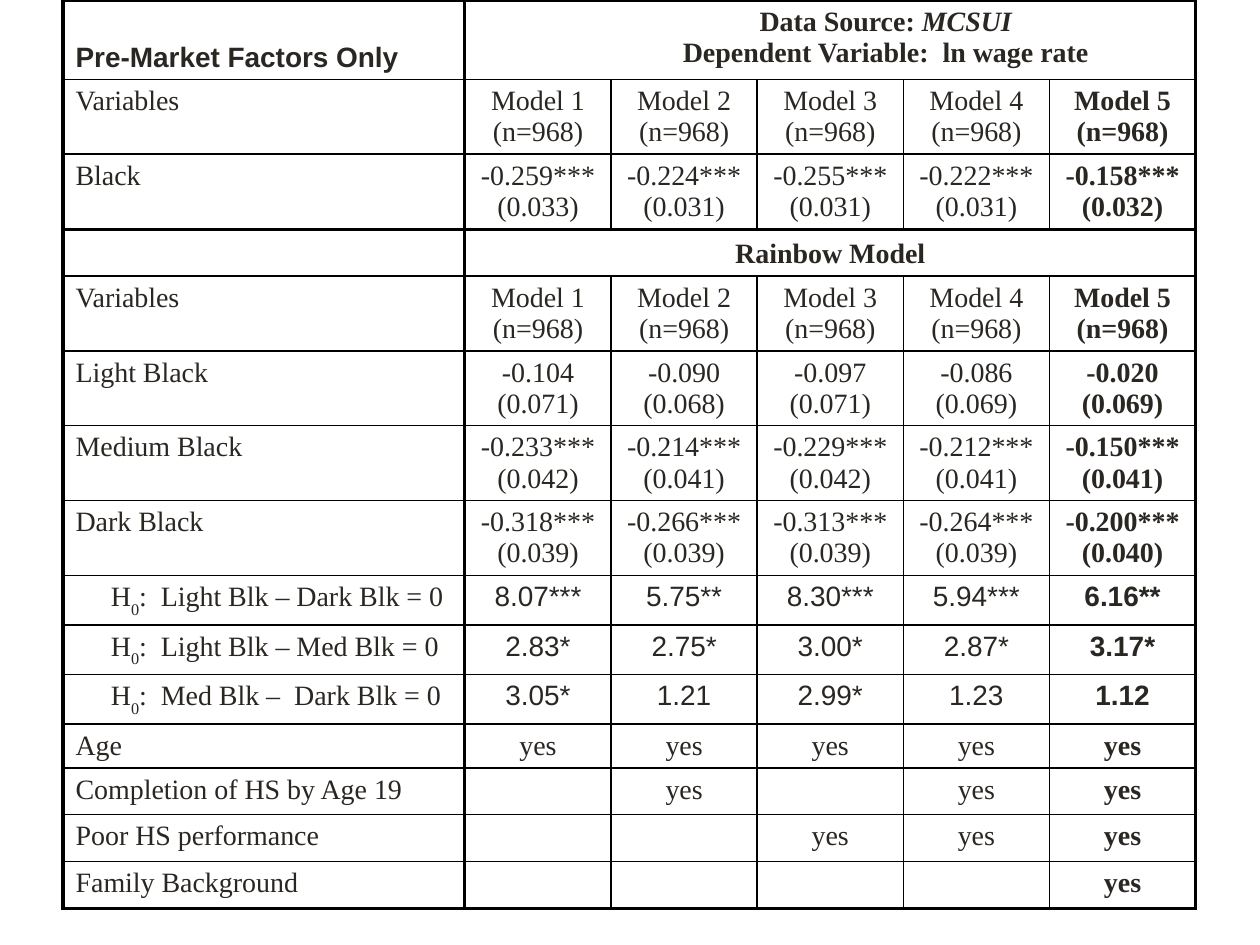
from lxml import etree
from pptx import Presentation
from pptx.dml.color import RGBColor
from pptx.enum.text import MSO_ANCHOR, PP_ALIGN
from pptx.oxml.ns import qn
from pptx.util import Inches, Pt

LEFT, CENTER = PP_ALIGN.LEFT, PP_ALIGN.CENTER
TOP, BOTTOM = MSO_ANCHOR.TOP, MSO_ANCHOR.BOTTOM

SIZES = ["(n=968)"] * 5
MODELS = [f"Model {number}" for number in range(1, 6)]

# Label, estimates and the second line below them
ESTIMATES = {
    1: ("Variables", MODELS, SIZES),
    2: ("Black",
        ["-0.259***", "-0.224***", "-0.255***", "-0.222***", "-0.158***"],
        ["(0.033)", "(0.031)", "(0.031)", "(0.031)", "(0.032)"]),
    4: ("Variables", MODELS, SIZES),
    5: ("Light Black",
        ["-0.104", "-0.090", "-0.097", "-0.086", "-0.020"],
        ["(0.071)", "(0.068)", "(0.071)", "(0.069)", "(0.069)"]),
    6: ("Medium Black",
        ["-0.233***", "-0.214***", "-0.229***", "-0.212***", "-0.150***"],
        ["(0.042)", "(0.041)", "(0.042)", "(0.041)", "(0.041)"]),
    7: ("Dark Black",
        ["-0.318***", "-0.266***", "-0.313***", "-0.264***", "-0.200***"],
        ["(0.039)", "(0.039)", "(0.039)", "(0.039)", "(0.040)"]),
}
HYPOTHESES = {
    8: (":  Light Blk – Dark Blk = 0",
        ["8.07***", "5.75**", "8.30***", "5.94***", "6.16**"]),
    9: (":  Light Blk – Med Blk = 0",
        ["2.83*", "2.75*", "3.00*", "2.87*", "3.17*"]),
    10: (":  Med Blk –  Dark Blk = 0",
         ["3.05*", "1.21", "2.99*", "1.23", "1.12"]),
}
# Control variables and the models that include them
CONTROLS = {
    11: ("Age", [1, 2, 3, 4, 5]),
    12: ("Completion of HS by Age 19", [2, 4, 5]),
    13: ("Poor HS performance", [3, 4, 5]),
    14: ("Family Background", [5]),
}
COLUMN_WIDTHS = [3.19] + [1.16] * 5
ROW_HEIGHTS = [0.63, 0.47, 0.47, 0.2] + [0.47] * 4 + [0.33] * 7


def color(value):
    return RGBColor.from_string(value)


class SlideBuilder:
    serif = "Times New Roman"
    sans = "Arial"
    text_color = "2A2723"
    line_color = "000000"
    size = 16
    thin, thick = 1, 2

    def __init__(self, presentation):
        self.slide = presentation.slides.add_slide(presentation.slide_layouts[6])

    def add_table(self, left, top, widths, heights):
        table = self.slide.shapes.add_table(
            len(heights), len(widths), Inches(left), Inches(top),
            Inches(sum(widths)), Inches(sum(heights))).table
        table.first_row = table.horz_banding = False
        for column, width in zip(table.columns, widths):
            column.width = Inches(width)
        for row, height in zip(table.rows, heights):
            row.height = Inches(height)
        return table

    def add_text(self, paragraph, text, font=None, bold=False, italic=False,
                 baseline=0):
        run = paragraph.add_run()
        run.text = text
        run.font.name = font or self.serif
        run.font.size = Pt(self.size)
        run.font.bold = bold
        run.font.italic = italic
        run.font.color.rgb = color(self.text_color)
        if baseline:
            run.font._element.set("baseline", str(baseline * 1000))

    def fill_cell(self, cell, lines, align=CENTER, anchor=TOP, indent=0,
                  **style):
        """Each line is a string or a list of (text, format) pairs."""
        cell.vertical_anchor = anchor
        for index, line in enumerate(lines):
            frame = cell.text_frame
            paragraph = frame.add_paragraph() if index else frame.paragraphs[0]
            paragraph.alignment = align
            if indent:
                properties = paragraph._p.get_or_add_pPr()
                properties.set("marL", str(Inches(indent)))
                properties.set("indent", "0")
            parts = [(line, {})] if isinstance(line, str) else line
            for text, extra in parts:
                self.add_text(paragraph, text, **{**style, **extra})

    def add_borders(self, cell, widths):
        cell.fill.background()
        properties = cell._tc.get_or_add_tcPr()
        for index, (side, width) in enumerate(zip("LRTB", widths)):
            line = etree.Element(qn(f"a:ln{side}"), w=str(Pt(width)))
            fill = etree.SubElement(line, qn("a:solidFill"))
            etree.SubElement(fill, qn("a:srgbClr"), val=self.line_color)
            properties.insert(index, line)

    def finish_table(self, table):
        """Draw the grid and keep empty cells at the text size."""
        last_row, last_column = len(table.rows) - 1, len(table.columns) - 1
        heavy_columns = {0, 1, last_column + 1}
        heavy_rows = {0, 3, last_row + 1}

        def weight(edge, heavy):
            return self.thick if edge in heavy else self.thin

        for row in range(last_row + 1):
            for column in range(last_column + 1):
                cell = table.cell(row, column)
                if not cell.text_frame.text:
                    etree.SubElement(cell.text_frame.paragraphs[0]._p,
                                     qn("a:endParaRPr"), sz=str(self.size * 100))
                if cell.is_spanned:
                    continue
                right = column + (cell.span_width if cell.is_merge_origin else 1)
                self.add_borders(cell, [
                    weight(column, heavy_columns), weight(right, heavy_columns),
                    weight(row, heavy_rows), weight(row + 1, heavy_rows)])


def main():
    presentation = Presentation()
    presentation.slide_width, presentation.slide_height = Inches(10), Inches(7.5)
    builder = SlideBuilder(presentation)
    table = builder.add_table(0.5, 0, COLUMN_WIDTHS, ROW_HEIGHTS)

    # Section headings
    for row in (0, 3):
        table.cell(row, 1).merge(table.cell(row, 5))
    builder.fill_cell(table.cell(0, 0), ["Pre-Market Factors Only"], align=LEFT,
                      anchor=BOTTOM, font=builder.sans, bold=True)
    builder.fill_cell(table.cell(0, 1),
                      [[("Data Source: ", {}), ("MCSUI", {"italic": True})],
                       "Dependent Variable:  ln wage rate"],
                      indent=0.88, bold=True)
    builder.fill_cell(table.cell(3, 1), ["Rainbow Model"], anchor=BOTTOM,
                      bold=True)

    # Model headings and estimates
    for row, (label, estimates, second_lines) in ESTIMATES.items():
        builder.fill_cell(table.cell(row, 0), [label], align=LEFT)
        for model, lines in enumerate(zip(estimates, second_lines), 1):
            builder.fill_cell(table.cell(row, model), lines, bold=model == 5)

    # Hypothesis tests
    for row, (hypothesis, statistics) in HYPOTHESES.items():
        label = [("H", {}), ("0", {"baseline": -30}), (hypothesis, {})]
        builder.fill_cell(table.cell(row, 0), [label], align=LEFT, indent=0.28)
        for model, statistic in enumerate(statistics, 1):
            builder.fill_cell(table.cell(row, model), [statistic],
                              font=builder.sans, bold=model == 5)

    # Control variables
    for row, (label, models) in CONTROLS.items():
        builder.fill_cell(table.cell(row, 0), [label], align=LEFT)
        for model in models:
            builder.fill_cell(table.cell(row, model), ["yes"], bold=model == 5)

    builder.finish_table(table)
    presentation.save("out.pptx")


if __name__ == "__main__":
    main()
